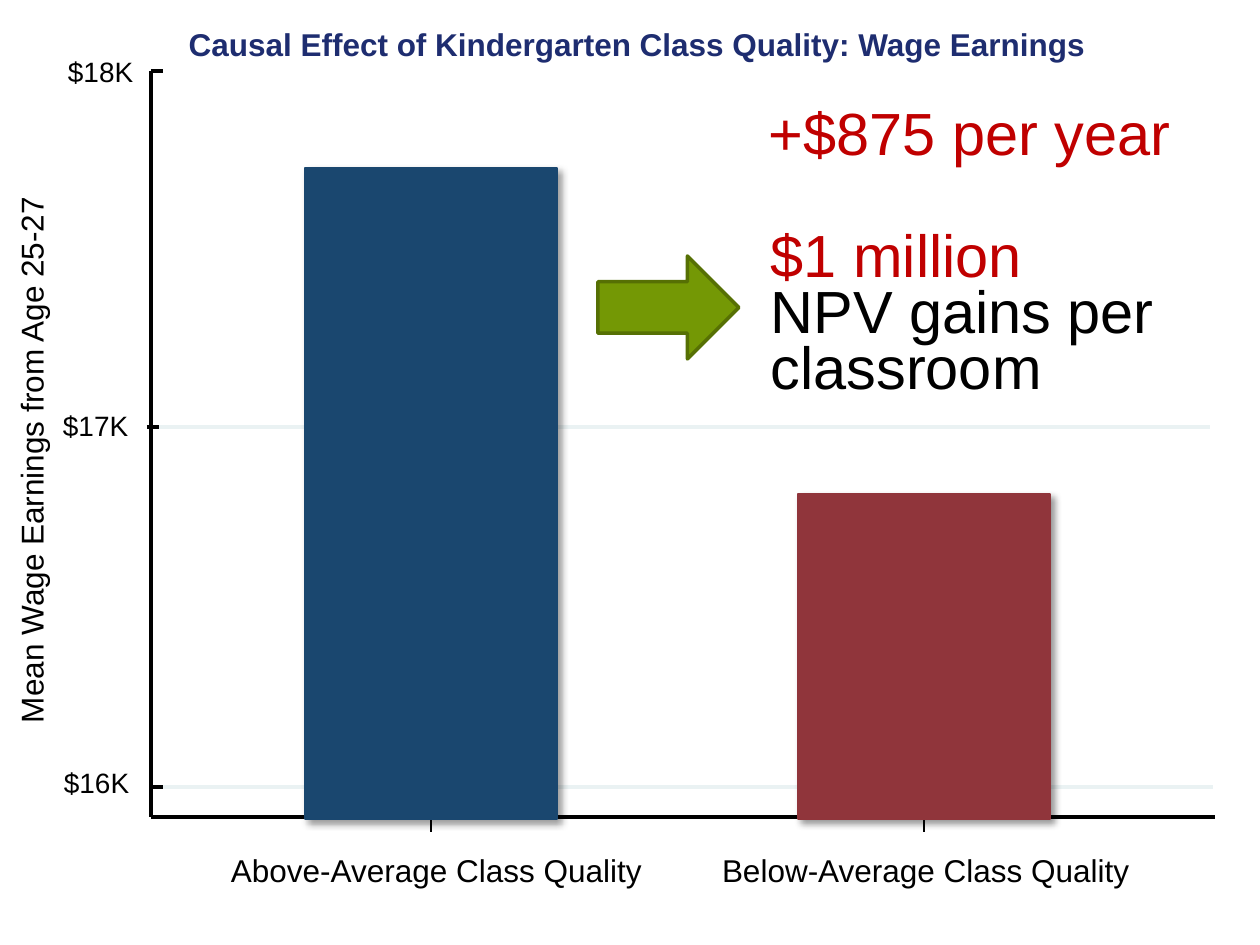
from lxml import etree
from pptx import Presentation
from pptx.dml.color import RGBColor
from pptx.enum.shapes import MSO_CONNECTOR, MSO_SHAPE
from pptx.enum.text import MSO_ANCHOR, MSO_AUTO_SIZE, PP_ALIGN
from pptx.oxml.ns import qn
from pptx.util import Emu, Pt

STRAIGHT = MSO_CONNECTOR.STRAIGHT
RECTANGLE, RIGHT_ARROW = MSO_SHAPE.RECTANGLE, MSO_SHAPE.RIGHT_ARROW
TOP, GROW = MSO_ANCHOR.TOP, MSO_AUTO_SIZE.SHAPE_TO_FIT_TEXT
LEFT, CENTER = PP_ALIGN.LEFT, PP_ALIGN.CENTER

PX_PER_INCH = 126
FONT = "Arial"
BLACK, NAVY, RED, GRID = "000000", "1E2D70", "C00000", "EAF2F3"

# Plot area, in px
AXIS_X, AXIS_TOP, AXIS_BOTTOM, AXIS_RIGHT = 151, 71, 817, 1215
BAR_WIDTH, BAR_BOTTOM = 252, 819

# Label, label left, label top, tick left, tick y, gridline right end
TICKS = [
    ("$18K", 68, 55, 151, 71, None),
    ("$17K", 63, 409, 147, 427, 1210),
    ("$16K", 64, 766, 151, 787, 1213),
]
# Label, label left, label width, bar left, bar top, colour
BARS = [
    ("Above-Average Class Quality", 231, 414, 305, 168, "1A476F"),
    ("Below-Average Class Quality", 722, 411, 798, 494, "90353B"),
]


def px(length):
    return Emu(round(length * 914400 / PX_PER_INCH))


def color(value):
    return RGBColor.from_string(value)


def place(item, left, top, width, height):
    bounds = {"left": left, "top": top, "width": width, "height": height}
    for name, value in bounds.items():
        setattr(item, name, px(value))


def fill_text(box, lines, size, align=LEFT, bold=False, wrap=False,
              inset=(0, 0), spacing=None):
    """Write (text, colour) lines into a box, one paragraph each."""
    side, edge = inset
    frame = box.text_frame
    frame_format = {
        "margin_left": px(side), "margin_right": px(side),
        "margin_top": px(edge), "margin_bottom": px(edge),
        "word_wrap": wrap, "auto_size": GROW, "vertical_anchor": TOP,
    }
    for name, value in frame_format.items():
        setattr(frame, name, value)
    for index, (text, ink) in enumerate(lines):
        para = frame.add_paragraph() if index else frame.paragraphs[0]
        para.alignment = align
        if spacing:
            para.line_spacing = Pt(spacing)
        span = para.add_run()
        span.text = text
        font_format = {"name": FONT, "size": Pt(size), "bold": bold}
        for name, value in font_format.items():
            setattr(span.font, name, value)
        span.font.color.rgb = color(ink)


def add_text(page, bounds, lines, size, **options):
    box = page.shapes.add_textbox(*map(px, bounds))
    fill_text(box, lines, size, **options)
    return box


def add_line(page, x1, y1, x2, y2, ink=BLACK, width=0):
    line = page.shapes.add_connector(STRAIGHT, px(x1), px(y1), px(x2), px(y2))
    line.line.color.rgb = color(ink)
    line.line.width = Pt(width)
    etree.SubElement(line._element.spPr, qn("a:effectLst"))


def add_block(page, kind, bounds, fill, outline, width):
    block = page.shapes.add_shape(kind, *map(px, bounds))
    block.shadow.inherit = False
    block.fill.solid()
    block.fill.fore_color.rgb = color(fill)
    block.line.color.rgb = color(outline)
    block.line.width = Pt(width)
    return block


def add_shadow(block):
    effects = block._element.spPr.find(qn("a:effectLst"))
    shadow = etree.SubElement(
        effects, qn("a:outerShdw"), blurRad=str(Pt(4)), dist=str(Pt(3)),
        dir="2700000", algn="tl", rotWithShape="0")
    ink = etree.SubElement(shadow, qn("a:srgbClr"), val=BLACK)
    etree.SubElement(ink, qn("a:alpha"), val="40000")


def add_value_axis(page):
    for label, left, top, tick_x, y, grid_end in TICKS:
        if grid_end:
            add_line(page, tick_x, y, grid_end, y, GRID)
        add_line(page, tick_x, y, tick_x + 12, y)
        add_text(page, (left, top, 66, 34), [(label, BLACK)], 16)
    add_line(page, AXIS_X, AXIS_BOTTOM, AXIS_X, AXIS_TOP)
    add_line(page, AXIS_X, AXIS_BOTTOM, AXIS_RIGHT, AXIS_BOTTOM)


def add_bar(page, label, label_left, label_width, left, top, ink):
    middle = left + BAR_WIDTH // 2
    add_line(page, middle, BAR_BOTTOM, middle, BAR_BOTTOM + 13, width=0.88)
    bounds = (left, top, BAR_WIDTH, BAR_BOTTOM - top)
    add_shadow(add_block(page, RECTANGLE, bounds, ink, ink, 0))
    add_text(page, (label_left, 851, label_width, 38), [(label, BLACK)], 18)


def add_callout(page, bounds, lines):
    add_text(page, bounds, lines, 34, wrap=True, inset=(13, 6), spacing=32)


def main():
    deck = Presentation()
    deck.slide_width, deck.slide_height = px(1260), px(945)
    page = deck.slides.add_slide(deck.slide_layouts[5])

    # Title
    title = page.shapes.title
    place(title, 184, 25, 906, 38)
    fill_text(title, [("Causal Effect of Kindergarten Class Quality: Wage Earnings",
                       NAVY)], 18, align=CENTER, bold=True)

    # Axes and bars
    axis_title = add_text(page, (-326, 441, 714, 38),
                          [("Mean Wage Earnings from Age 25-27", BLACK)], 18,
                          align=CENTER, wrap=True)
    axis_title.rotation = 270
    add_value_axis(page)
    for bar in BARS:
        add_bar(page, *bar)

    # Gains
    add_block(page, RIGHT_ARROW, (598, 256, 141, 103), "749805", "567004", 2)
    add_callout(page, (758, 227, 528, 183),
                [("$1 million", RED), ("NPV gains per classroom", BLACK)])
    add_callout(page, (756, 105, 528, 69), [("+$875 per year", RED)])

    deck.save("out.pptx")


if __name__ == "__main__":
    main()
